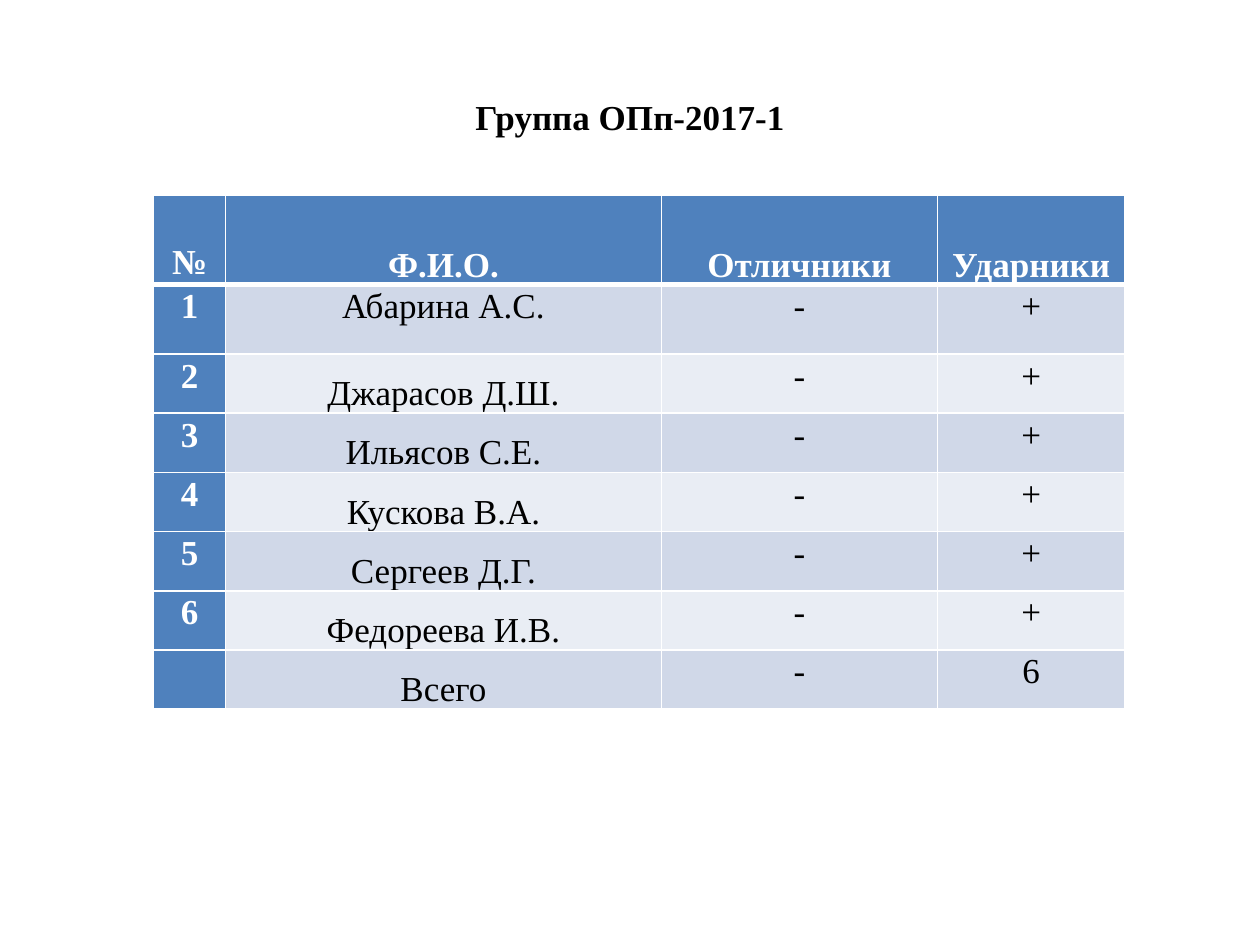
from dataclasses import dataclass

from lxml import etree
from pptx import Presentation
from pptx.dml.color import RGBColor
from pptx.enum.text import MSO_ANCHOR, PP_ALIGN
from pptx.oxml.ns import qn
from pptx.util import Inches, Pt

TOP, MIDDLE, BOTTOM = MSO_ANCHOR.TOP, MSO_ANCHOR.MIDDLE, MSO_ANCHOR.BOTTOM
CENTER = PP_ALIGN.CENTER

FONT = "Times New Roman"
BLACK, WHITE, BLUE = "000000", "FFFFFF", "4F81BD"
BANDS = ("D0D8E8", "E9EDF4")
COLUMN_WIDTHS = (0.57, 3.46, 2.19, 1.49)
ROW_HEIGHTS = (0.71, 0.55) + (0.47,) * 6
HEADERS = ("№", "Ф.И.О.", "Отличники", "Ударники")
STUDENTS = (
    "Абарина А.С.",
    "Джарасов Д.Ш.",
    "Ильясов С.Е.",
    "Кускова В.А.",
    "Сергеев Д.Г.",
    "Федореева И.В.",
)


@dataclass
class CellStyle:
    fill: str
    color: str
    bold: bool
    anchor: MSO_ANCHOR
    top_border: float = 1
    bottom_border: float = 1
    bottom_margin: float = 0


def rgb(value: str) -> RGBColor:
    return RGBColor.from_string(value)


def add_text(paragraph, text: str, color: str, bold: bool) -> None:
    paragraph.alignment = CENTER
    run = paragraph.add_run()
    run.text = text
    run.font.name = FONT
    run.font.size = Pt(20)
    run.font.bold = bold
    run.font.color.rgb = rgb(color)


def set_borders(cell, style: CellStyle) -> None:
    properties = cell._tc.get_or_add_tcPr()
    borders = (
        ("a:lnL", 1),
        ("a:lnR", 1),
        ("a:lnT", style.top_border),
        ("a:lnB", style.bottom_border),
    )
    for position, (tag, width) in enumerate(borders):
        line = etree.Element(qn(tag), w=str(Pt(width)))
        fill = etree.SubElement(line, qn("a:solidFill"))
        etree.SubElement(fill, qn("a:srgbClr"), val=WHITE)
        properties.insert(position, line)


def fill_cell(cell, text: str, style: CellStyle) -> None:
    cell.fill.solid()
    cell.fill.fore_color.rgb = rgb(style.fill)
    cell.margin_left = cell.margin_right = Inches(0.07)
    cell.margin_top = Inches(0)
    cell.margin_bottom = Inches(style.bottom_margin)
    cell.vertical_anchor = style.anchor
    set_borders(cell, style)
    if text:
        paragraph = cell.text_frame.paragraphs[0]
        paragraph.line_spacing = 1.07
        add_text(paragraph, text, style.color, style.bold)


def cell_style(row: int, column: int) -> CellStyle:
    if row == 0:
        margin = 0.02 if column == 0 else 0
        return CellStyle(BLUE, WHITE, True, BOTTOM, bottom_border=3, bottom_margin=margin)
    top_border = 3 if row == 1 else 1
    if column == 0:
        return CellStyle(BLUE, WHITE, True, TOP, top_border)
    anchor = BOTTOM if column == 1 and row > 1 else TOP
    return CellStyle(BANDS[(row - 1) % 2], BLACK, False, anchor, top_border)


def add_title(slide, text: str) -> None:
    title = slide.shapes.add_textbox(Inches(0.5), Inches(0.3), Inches(9), Inches(1.25))
    frame = title.text_frame
    frame.word_wrap = True
    frame.vertical_anchor = MIDDLE
    add_text(frame.paragraphs[0], text, BLACK, True)


def add_results_table(slide) -> None:
    students = [(str(number), name, "-", "+") for number, name in enumerate(STUDENTS, 1)]
    rows = [HEADERS, *students, ("", "Всего", "-", str(len(STUDENTS)))]
    table = slide.shapes.add_table(
        len(rows),
        len(HEADERS),
        Inches(1.22),
        Inches(1.55),
        Inches(sum(COLUMN_WIDTHS)),
        Inches(sum(ROW_HEIGHTS)),
    ).table
    for column, width in zip(table.columns, COLUMN_WIDTHS):
        column.width = Inches(width)
    for row, height in zip(table.rows, ROW_HEIGHTS):
        row.height = Inches(height)
    for row_index, texts in enumerate(rows):
        for column_index, text in enumerate(texts):
            style = cell_style(row_index, column_index)
            fill_cell(table.cell(row_index, column_index), text, style)


def main() -> None:
    presentation = Presentation()
    presentation.slide_width = Inches(10)
    presentation.slide_height = Inches(7.5)
    slide = presentation.slides.add_slide(presentation.slide_layouts[6])
    add_title(slide, "Группа ОПп-2017-1")
    add_results_table(slide)
    presentation.save("out.pptx")


if __name__ == "__main__":
    main()
